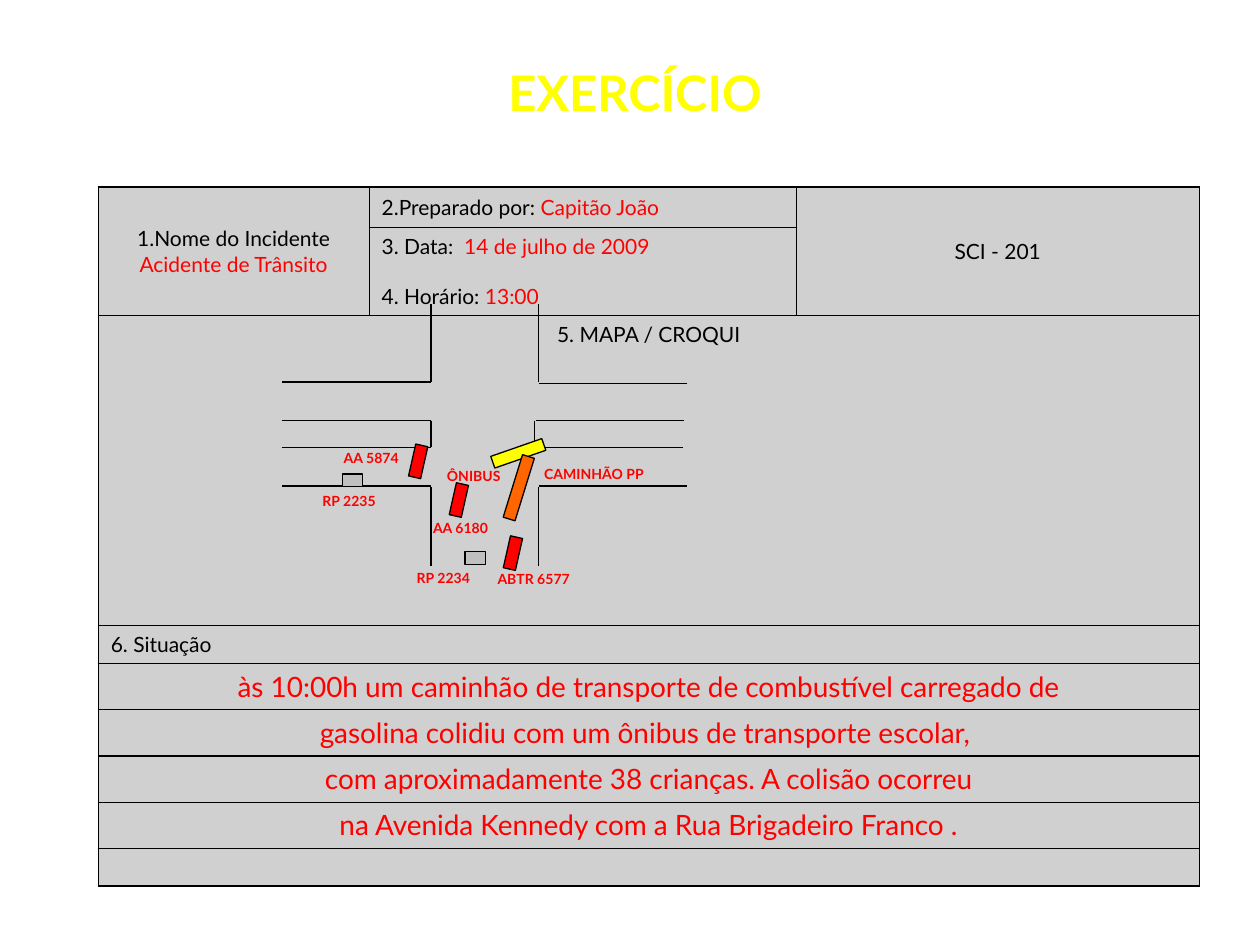
from lxml import etree
from pptx import Presentation
from pptx.dml.color import RGBColor
from pptx.enum.shapes import MSO_CONNECTOR, MSO_SHAPE
from pptx.enum.text import MSO_ANCHOR, MSO_AUTO_SIZE, PP_ALIGN
from pptx.oxml.ns import qn
from pptx.util import Cm, Pt

LINE, RECT = MSO_CONNECTOR.STRAIGHT, MSO_SHAPE.RECTANGLE
LEFT, CENTER = PP_ALIGN.LEFT, PP_ALIGN.CENTER
TOP, MIDDLE = MSO_ANCHOR.TOP, MSO_ANCHOR.MIDDLE
FIXED = MSO_AUTO_SIZE.NONE
COLORS = {"black": "000000", "red": "FF0000", "yellow": "FFFF00",
          "orange": "FF6600", "gray": "C0C0C0", "cell": "D0D0D0"}
THIN = Pt(0.75)


def color(name):
    return RGBColor.from_string(COLORS[name])


class Board:
    font = "Lato"

    def __init__(self, slide):
        self.slide = slide
        self.group = None

    def style(self, font, size, tint=None, bold=False):
        font.name, font.size, font.bold = self.font, Pt(size), bold
        if tint:
            font.color.rgb = color(tint)

    def title(self, text, x, y, w, h):
        box = self.slide.shapes.title
        box.left, box.top, box.width, box.height = map(Cm, (x, y, w, h))
        frame = box.text_frame
        frame.text = text
        frame.auto_size, frame.vertical_anchor = FIXED, MIDDLE
        para = frame.paragraphs[0]
        para.alignment = CENTER
        self.style(para.font, 28, "yellow", True)

    def table(self, x, y, cols, rows):
        frame = self.slide.shapes.add_table(
            len(rows), len(cols), Cm(x), Cm(y), Cm(sum(cols)), Cm(sum(rows)))
        grid = frame.table
        for col, width in zip(grid.columns, cols):
            col.width = Cm(width)
        for row, height in zip(grid.rows, rows):
            row.height = Cm(height)
            for cell in row.cells:
                self.border(cell)
                cell.fill.solid()
                cell.fill.fore_color.rgb = color("cell")
                self.style(cell.text_frame.paragraphs[0].font, 12, "black")
        return grid

    def border(self, cell):
        props = cell._tc.get_or_add_tcPr()
        for side in ("lnL", "lnR", "lnT", "lnB"):
            edge = etree.SubElement(props, qn("a:" + side), w=str(THIN))
            fill = etree.SubElement(edge, qn("a:solidFill"))
            etree.SubElement(fill, qn("a:srgbClr"), val=COLORS["black"])

    def cell(self, cell, paras, align=LEFT, anchor=TOP, size=12, gap=0):
        """Each paragraph is a list of (text, colour) runs."""
        cell.vertical_anchor = anchor
        frame = cell.text_frame
        for i, runs in enumerate(paras):
            para = frame.add_paragraph() if i else frame.paragraphs[0]
            para.alignment = align
            if i:
                para.space_before = Pt(gap)
            self.style(para.font, size)
            for text, tint in runs:
                run = para.add_run()
                run.text = text
                run.font.color.rgb = color(tint)

    def line(self, x1, y1, x2, y2):
        line = self.group.shapes.add_connector(
            LINE, Cm(x1), Cm(y1), Cm(x2), Cm(y2))
        line.line.color.rgb = color("black")
        line.line.width = THIN
        etree.SubElement(line._element.spPr, qn("a:effectLst"))

    def block(self, tint, x, y, w, turn=0):
        """Draw a vehicle centred on x, y."""
        h = 0.25
        box = self.group.shapes.add_shape(
            RECT, Cm(x - w / 2), Cm(y - h / 2), Cm(w), Cm(h))
        box.rotation = turn
        box.shadow.inherit = False
        box.fill.solid()
        box.fill.fore_color.rgb = color(tint)
        box.line.color.rgb = color("black")
        box.line.width = THIN

    def label(self, text, x, y, w=2.59):
        box = self.group.shapes.add_textbox(Cm(x), Cm(y), Cm(w), Cm(0.53))
        frame = box.text_frame
        frame.word_wrap = True
        frame.text = text
        self.style(frame.paragraphs[0].font, 8, "red", True)


def main():
    deck = Presentation()
    deck.slide_width, deck.slide_height = Cm(25.4), Cm(19.05)
    board = Board(deck.slides.add_slide(deck.slide_layouts[5]))
    board.title("EXERCÍCIO", 4.9, 1.12, 15.8, 1.45)

    # Incident form
    form = board.table(1.98, 3.77, [5.46, 8.61, 8.13],
                       [0.81, 1.77, 6.25, 0.77] + [0.93] * 4 + [0.76])
    for col in (0, 2):
        form.cell(0, col).merge(form.cell(1, col))
    for row in range(2, 9):
        form.cell(row, 0).merge(form.cell(row, 2))
    board.cell(form.cell(0, 0), [[("1.Nome do Incidente", "black")],
                                 [("Acidente de Trânsito", "red")]],
               CENTER, MIDDLE)
    board.cell(form.cell(0, 1), [[("2.Preparado por: ", "black"),
                                  ("Capitão João", "red")]], LEFT, MIDDLE)
    board.cell(form.cell(0, 2), [[("SCI - 201", "black")]], CENTER, MIDDLE)
    board.cell(form.cell(1, 1), [[("3. Data:  ", "black"),
                                  ("14 de julho de 2009", "red")],
                                 [("4. Horário: ", "black"),
                                  ("13:00", "red")]], LEFT, MIDDLE, gap=14.4)
    board.cell(form.cell(2, 0), [[("5. MAPA / CROQUI", "black")]], CENTER)
    board.cell(form.cell(3, 0), [[("6. Situação", "black")]])
    story = [
        "às 10:00h um caminhão de transporte de combustível carregado de",
        "gasolina colidiu com um ônibus de transporte escolar, ",
        "com aproximadamente 38 crianças. A colisão ocorreu",
        "na Avenida Kennedy com a Rua Brigadeiro Franco .",
    ]
    for row, text in enumerate(story, 4):
        board.cell(form.cell(row, 0), [[(text, "red")]], CENTER, size=16)

    # Sketch: street edges
    board.group = board.slide.shapes.add_group_shape()
    for y in (7.7, 8.48, 9.02, 9.8):
        board.line(5.69, y, 8.69, y)
    for x, y in ((10.86, 7.73), (10.8, 8.48), (10.78, 9.02), (10.86, 9.8)):
        board.line(x, y, x + 2.99, y)
    for x in (8.69, 10.86):
        board.line(x, 6.13, x, 7.71)
        board.line(x, 9.82, x, 11.4)
    for x in (8.69, 10.78):
        board.line(x, 8.48, x, 9.02)

    # Sketch: vehicles
    board.block("yellow", 10.45, 9.14, 1.09, 340.8)
    board.block("orange", 10.46, 9.83, 1.32, 287.2)
    for x, y in ((9.58, 11.25), (7.11, 9.68)):
        board.block("gray", x, y, 0.41)
    for x, y in ((8.43, 9.3), (9.25, 10.08), (10.34, 11.15)):
        board.block("red", x, y, 0.66, 282.7)

    # Sketch: labels
    board.label("ABTR 6577", 9.78, 11.38)
    board.label("AA 6180", 8.48, 10.34)
    board.label("AA 5874", 6.68, 8.94)
    board.label("RP 2235", 6.25, 9.8)
    board.label("RP 2234", 8.15, 11.35)
    board.label("ÔNIBUS", 8.76, 9.3, 2.03)
    board.label("CAMINHÃO PP", 10.72, 9.27, 3)

    deck.save("out.pptx")


if __name__ == "__main__":
    main()
